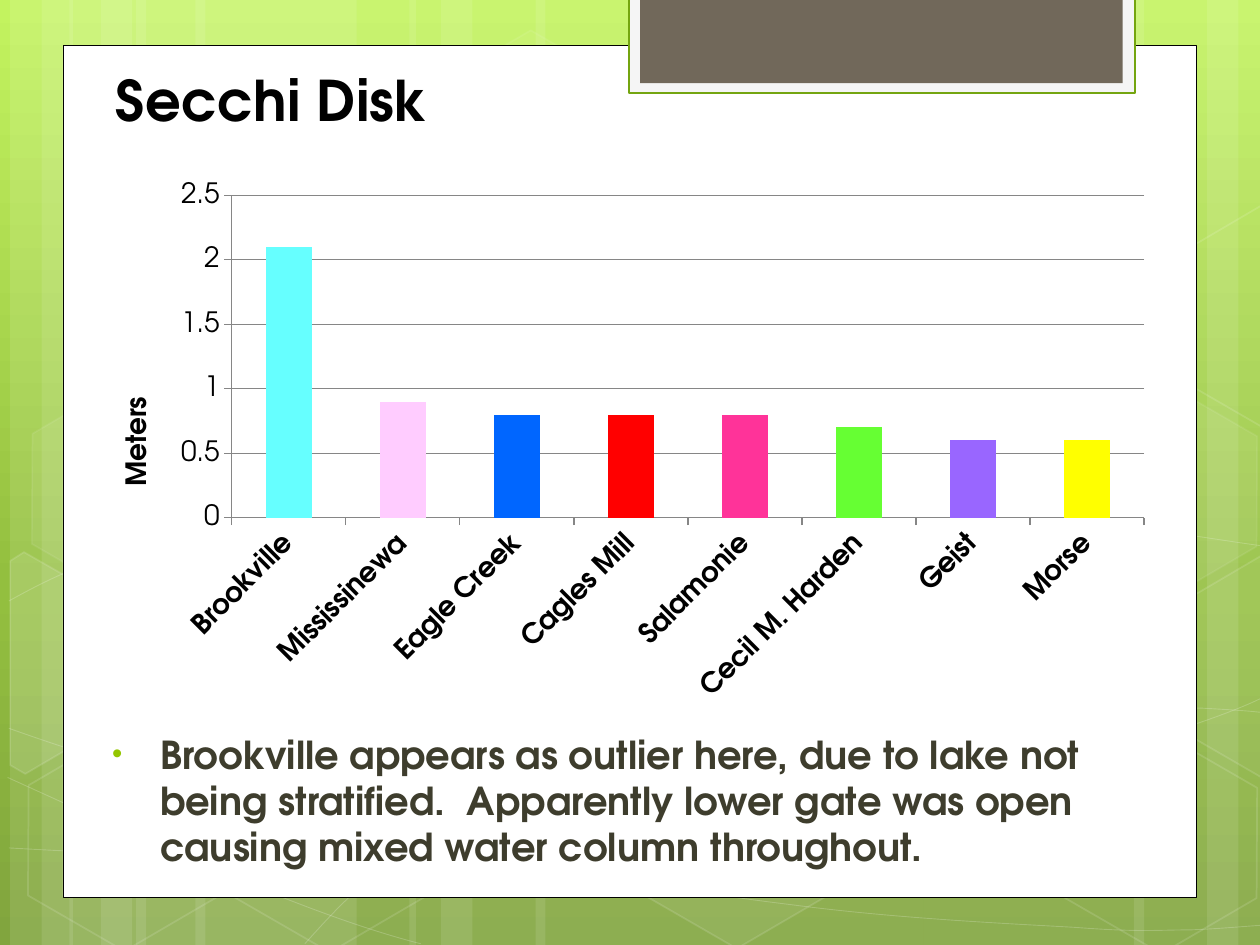
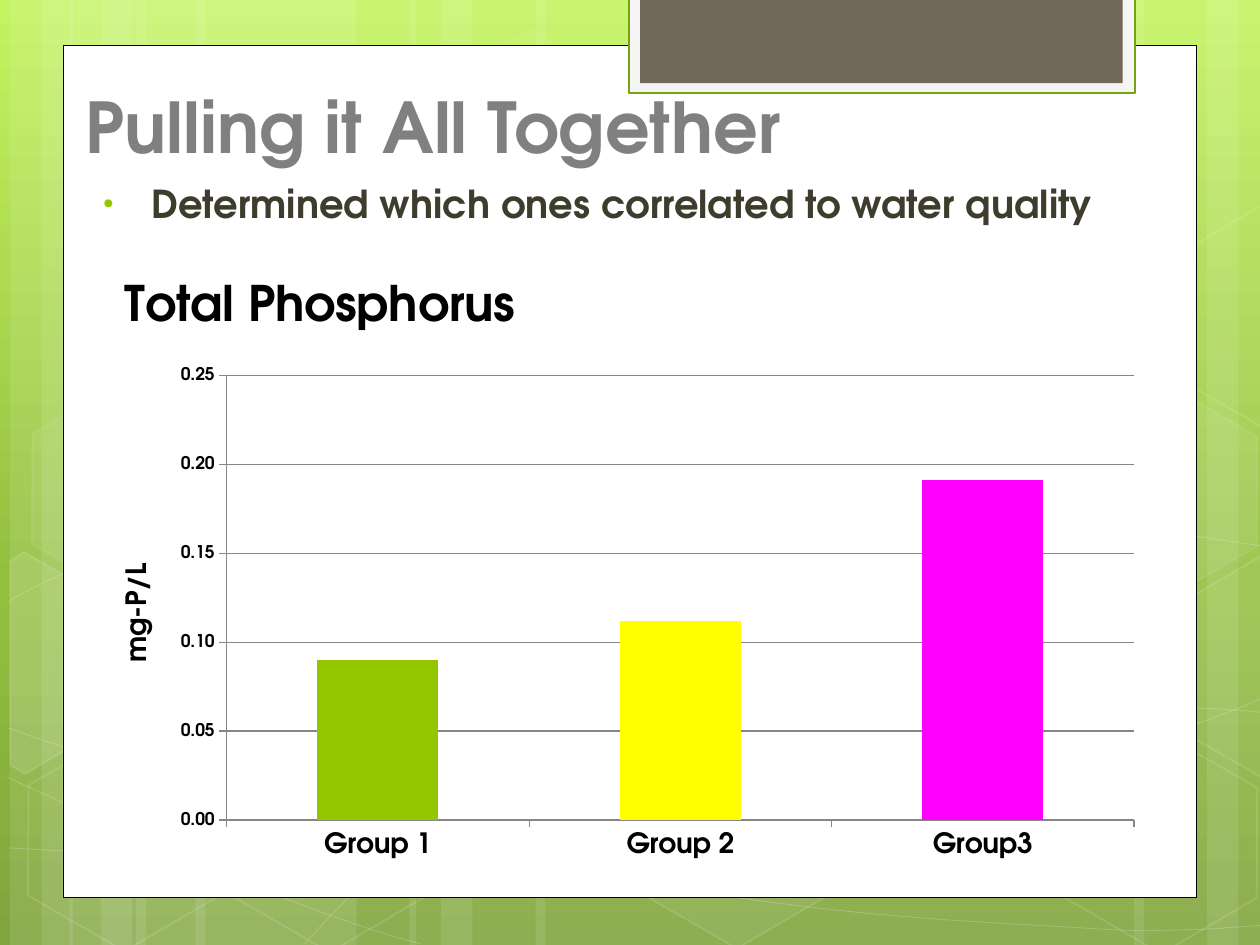
from copy import deepcopy
from math import cos, radians, sin

from lxml import etree
from pptx import Presentation
from pptx.chart.data import CategoryChartData
from pptx.dml.color import RGBColor
from pptx.enum.chart import XL_CHART_TYPE as CHART, XL_TICK_MARK as TICK
from pptx.enum.shapes import MSO_SHAPE as SHAPE
from pptx.enum.text import MSO_ANCHOR as ANCHOR, MSO_AUTO_SIZE as AUTO, PP_ALIGN as ALIGN
from pptx.oxml.ns import qn
from pptx.util import Inches, Pt

FACE = "TeX Gyre Adventor"
WHITE = RGBColor(0xFF, 0xFF, 0xFF)
BLACK = RGBColor(0, 0, 0)
GREY = RGBColor(0x80, 0x80, 0x80)
GRID = RGBColor(0x86, 0x86, 0x86)
INK = RGBColor(0x3E, 0x3D, 0x2D)
LIME = RGBColor(0x94, 0xC6, 0x00)
YELLOW = RGBColor(0xFF, 0xFF, 0x00)
MAGENTA = RGBColor(0xFF, 0x00, 0xFF)
TAB_PAPER = RGBColor(0xF5, 0xF5, 0xF5)
TAB_EDGE = RGBColor(0x74, 0xA5, 0x10)
TAB_FILL = RGBColor(0x71, 0x68, 0x5A)
SKY = [(0, RGBColor(0xC3, 0xF3, 0x5F)), (0.62, RGBColor(0x93, 0xBF, 0x3F)),
       (1, RGBColor(0x81, 0xA5, 0x3E))]
LAKE_COLORS = [RGBColor(0x66, 0xFF, 0xFF), RGBColor(0xFF, 0xCC, 0xFF),
               RGBColor(0x00, 0x66, 0xFF), RGBColor(0xFF, 0x00, 0x00),
               RGBColor(0xFF, 0x33, 0x99), RGBColor(0x66, 0xFF, 0x33),
               RGBColor(0x99, 0x66, 0xFF), YELLOW]

TILT = 30
# Stripe groups: a wide, a narrow and a medium band each (left, width)
STRIPES = [(1.08, 1.75), (0.08, 0.5), (0.33, 0.83),
           (1.55, 1.75), (0.55, 0.5), (0.8, 0.83),
           (7.33, 1.75), (9.58, 0.5), (9, 0.83),
           (4.25, 3.08), (3.25, 0.5), (3.5, 0.83)]
# Start point, then cubic segments (two controls and an end)
WAVES = [
    [(0.07, 6.73), (0.61, 6.76, 1.15, 6.79, 1.9, 6.78), (2.65, 6.77, 3.58, 6.75, 4.58, 6.65),
     (5.58, 6.55, 7, 6.36, 7.92, 6.17), (8.83, 5.98, 9.77, 5.68, 10.07, 5.51)],
    [(0.07, 4.77), (0.36, 4.61, 0.65, 4.46, 1.21, 4.31), (1.78, 4.16, 2.59, 3.94, 3.47, 3.87),
     (4.36, 3.8, 5.44, 3.79, 6.54, 3.87), (7.64, 3.95, 9.47, 4.26, 10.07, 4.34)],
    [(0.06, 6.17), (1.27, 6.72, 2.47, 7.27, 3.34, 7.49)],
    [(0.07, 5.78), (0.38, 5.89, 0.7, 6, 1.28, 6.16), (1.86, 6.31, 2.73, 6.56, 3.57, 6.73),
     (4.4, 6.9, 5.45, 7.08, 6.28, 7.18), (7.11, 7.29, 8, 7.33, 8.53, 7.36),
     (9.05, 7.4, 9.19, 7.38, 9.45, 7.38), (9.71, 7.37, 9.89, 7.35, 10.07, 7.34)],
    [(2.42, 7.49), (2.6, 7.29, 2.78, 7.09, 3.02, 6.91), (3.26, 6.73, 3.6, 6.53, 3.88, 6.39),
     (4.16, 6.25, 4.33, 6.19, 4.7, 6.09), (5.06, 5.99, 5.73, 5.85, 6.08, 5.78),
     (6.44, 5.71, 6.49, 5.71, 6.8, 5.69), (7.11, 5.66, 7.6, 5.63, 7.94, 5.62),
     (8.29, 5.61, 8.86, 5.62, 8.86, 5.62), (9.08, 5.62, 9.31, 5.62, 9.53, 5.62),
     (9.71, 5.63, 9.88, 5.64, 9.97, 5.65), (10.06, 5.66, 10.03, 5.65, 10.06, 5.66)],
]
# Left, top, fill opacity, line opacity (percent)
HEXAGONS = [(3.34, 0.36, 4, 8), (4.97, 5.89, 6, 12), (0.11, 5.91, 0, 12),
            (0.14, 3.12, 7, 8), (1.74, 5.92, 0, 12), (7.53, 4.53, 10, 12),
            (8.34, 5.93, 0, 12), (8.34, 3.14, 7, 8)]
# Hexagons cut off by the slide edge: centre of the tilted frame, outline, fill opacity
CUT_HEXAGONS = [
    ((0.36, 5.35), [(0.08, 4.45), (0.19, 4.38), (0.96, 4.82), (0.95, 5.7), (0.2, 6.14),
                    (0.08, 6.07)], 10),
    ((9.85, 5.2), [(9.26, 4.85), (10.01, 4.41), (10.09, 4.46), (10.09, 6.13), (10.02, 6.17),
                   (9.26, 5.73)], 4),
    ((9.85, 2.41), [(9.26, 2.07), (10.01, 1.63), (10.1, 1.68), (10.09, 3.35), (10.02, 3.39),
                    (9.26, 2.95)], 0),
]


def set_format(target, **values):
    for name, value in values.items():
        setattr(target, name, value)


def set_font(font, size, bold=True, color=BLACK):
    set_format(font, name=FACE, size=Pt(size), bold=bold)
    font.color.rgb = color


def box_inches(box):
    return [Inches(v) for v in box]


def paint(fill, color, opacity=100):
    """Fill with a solid colour, or with nothing when opacity is 0."""
    if not opacity:
        fill.background()
        return
    fill.solid()
    fill.fore_color.rgb = color


def set_opacity(parent, opacity):
    for clr in parent.findall(f"{qn('a:solidFill')}/{qn('a:srgbClr')}"):
        etree.SubElement(clr, qn("a:alpha"), val=str(opacity * 1000))


def style(shape, fill=WHITE, opacity=100, line=None, width=1, line_opacity=100):
    shape.shadow.inherit = False
    paint(shape.fill, fill, opacity)
    if opacity < 100:
        set_opacity(shape.element.spPr, opacity)
    if line is None:
        shape.line.fill.background()
        return
    paint(shape.line.fill, line)
    shape.line.width = Pt(width)
    if line_opacity < 100:
        set_opacity(shape.element.spPr.find(qn("a:ln")), line_opacity)


def add_box(s, box, kind=SHAPE.RECTANGLE, **look):
    sp = s.shapes.add_shape(kind, *box_inches(box))
    style(sp, **look)
    return sp


def add_outline(s, points, close, **look):
    (x, y), *rest = [box_inches(p) for p in points]
    builder = s.shapes.build_freeform(x, y)
    builder.add_line_segments(rest, close=close)
    sp = builder.convert_to_shape()
    style(sp, **look)
    return sp


def add_wave(s, start, segments):
    """Draw through all control points, then turn each three lines into one curve."""
    points = [start] + [seg[i:i + 2] for seg in segments for i in (0, 2, 4)]
    sp = add_outline(s, points, False, opacity=0, line=WHITE, width=0.5, line_opacity=20)
    lines = list(sp.element.iter(qn("a:lnTo")))
    for i in range(0, len(lines), 3):
        curve = etree.Element(qn("a:cubicBezTo"))
        lines[i].addprevious(curve)
        for line in lines[i:i + 3]:
            curve.append(line[0])
            line.getparent().remove(line)


def turn_back(point, centre):
    """Undo the tilt of a point around the centre of its frame."""
    dx, dy = point[0] - centre[0], point[1] - centre[1]
    c, k = cos(radians(TILT)), sin(radians(TILT))
    return centre[0] + dx * c + dy * k, centre[1] - dx * k + dy * c


def set_background(layout):
    fill = layout.background.fill
    fill.gradient()
    fill.gradient_angle = 270
    stops = next(layout.element.iter(qn("a:gsLst")))
    stops.append(deepcopy(stops[-1]))
    for stop, (position, color) in zip(fill.gradient_stops, SKY):
        stop.position = position
        stop.color.rgb = color


def draw_backdrop(s):
    for left, width in STRIPES:
        add_box(s, (left, 0, width, 7.5), opacity=10)
    for start, *segments in WAVES:
        add_wave(s, start, segments)
    for left, top, opacity, line_opacity in HEXAGONS:
        sp = add_box(s, (left, top, 1.75, 1.52), SHAPE.HEXAGON, opacity=opacity,
                     line=WHITE, line_opacity=line_opacity)
        sp.adjustments[0] = 0.285
        sp.rotation = TILT
    for centre, points, opacity in CUT_HEXAGONS:
        sp = add_outline(s, [turn_back(p, centre) for p in points], True,
                         opacity=opacity, line=WHITE, line_opacity=12)
        sp.rotation = TILT
    add_box(s, (0.5, 0.36, 9, 6.76), line=BLACK, width=0.5)
    add_box(s, (4.99, -0.02, 4.02, 0.76), fill=TAB_PAPER, line=TAB_EDGE, width=1.25)
    add_box(s, (5.08, -0.02, 3.83, 0.68), fill=TAB_FILL)


def share_backdrop(s):
    """Draw the backdrop and move it to the layout, so every slide shows it."""
    own = {sp.shape_id for sp in s.shapes}
    draw_backdrop(s)
    tree = s.slide_layout.element.cSld.spTree
    for sp in list(s.shapes):
        if sp.shape_id not in own:
            tree.append(sp.element)
    set_background(s.slide_layout)


def place(sp, box):
    set_format(sp, **dict(zip(("left", "top", "width", "height"), box_inches(box))))


def fill_title(s, box, text):
    sp = s.shapes.title
    place(sp, box)
    tf = sp.text_frame
    set_format(tf, text=text, word_wrap=True, auto_size=AUTO.NONE,
               vertical_anchor=ANCHOR.BOTTOM)
    p = tf.paragraphs[0]
    p.alignment = ALIGN.LEFT
    set_font(p.runs[0].font, 40, color=GREY)


def fill_body(s, box, text):
    sp = s.placeholders[1]
    place(sp, box)
    tf = sp.text_frame
    set_format(tf, text=text, word_wrap=True, auto_size=AUTO.NONE,
               vertical_anchor=ANCHOR.TOP)
    p = tf.paragraphs[0]
    set_font(p.runs[0].font, 22, color=INK)
    pPr = p._p.get_or_add_pPr()
    pPr.set("marL", str(Inches(0.5)))
    pPr.set("indent", str(Inches(-0.38)))
    clr = etree.SubElement(pPr, qn("a:buClr"))
    etree.SubElement(clr, qn("a:srgbClr"), val=str(LIME))
    etree.SubElement(pPr, qn("a:buSzPct"), val="76000")
    etree.SubElement(pPr, qn("a:buChar"), char="•")


def set_layout(element, chart_box, box, inner=False):
    """Pin a chart part to a slide position; box is left, top and maybe width, height."""
    layout = element.find(qn("c:layout"))
    if layout is None:
        layout = etree.Element(qn("c:layout"))
        element.insert(0, layout)
    manual = etree.SubElement(layout, qn("c:manualLayout"))
    if inner:
        etree.SubElement(manual, qn("c:layoutTarget"), val="inner")
    for side in ("x", "y"):
        etree.SubElement(manual, qn(f"c:{side}Mode"), val="edge")
    left, top, width, height = chart_box
    offsets = (left, top, 0, 0)
    for side, value, offset, size in zip("xywh", box, offsets, (width, height) * 2):
        etree.SubElement(manual, qn(f"c:{side}"), val=f"{(value - offset) / size:.4f}")


def set_title(title, text, size, chart_box, at):
    title.text_frame.text = text
    set_font(title.text_frame.paragraphs[0].runs[0].font, size)
    set_layout(title.element, chart_box, at)


def add_bars(s, box, plot_box, values, colors, title, unit, top, step,
             number_format="General", value_font=(16, False), slant=0):
    """Column chart; title and unit are (text, size, position on the slide)."""
    data = CategoryChartData(number_format=number_format)
    data.categories = list(values)
    data.add_series("Series 1", list(values.values()))
    chart = s.shapes.add_chart(CHART.COLUMN_CLUSTERED, *box_inches(box), data).chart
    chart.has_legend = False
    set_font(chart.font, 10, False)
    chart.has_title = True
    set_title(chart.chart_title, title[0], title[1], box, title[2])
    set_layout(chart.element.xpath("c:chart/c:plotArea")[0], box, plot_box, inner=True)

    plot = chart.plots[0]
    set_format(plot, gap_width=150, vary_by_categories=False)
    series = plot.series[0]
    paint(series.format.fill, LIME)
    for i, color in enumerate(colors):
        paint(series.points[i].format.fill, color)

    cat, val = chart.category_axis, chart.value_axis
    for axis, font in ((cat, (16, True)), (val, value_font)):
        set_format(axis, major_tick_mark=TICK.OUTSIDE, minor_tick_mark=TICK.NONE)
        axis.format.line.color.rgb = GRID
        set_font(axis.tick_labels.font, *font)
    cat.has_major_gridlines = False
    set_format(val, minimum_scale=0, maximum_scale=top, major_unit=step,
               has_major_gridlines=True, has_title=True)
    val.major_gridlines.format.line.color.rgb = GRID
    set_format(val.tick_labels, number_format=number_format, number_format_is_linked=False)
    set_title(val.axis_title, unit[0], unit[1], box, unit[2])
    turned = [(val.axis_title.element.xpath("c:tx/c:rich/a:bodyPr")[0], -90)]
    if slant:
        turned.append((chart.element.xpath(".//c:catAx/c:txPr/a:bodyPr")[0], slant))
    for body, angle in turned:
        body.set("rot", str(angle * 60000))
        body.set("vert", "horz")


def secchi_slide(s):
    title = s.shapes.title.element
    title.getparent().remove(title)
    fill_body(s, (0.67, 5.75, 8.36, 1.25),
              "Brookville appears as outlier here, due to lake not being stratified.  "
              "Apparently lower gate was open causing mixed water column throughout.")
    depths = {"Brookville": 2.1, "Mississinewa": 0.9, "Eagle Creek": 0.8, "Cagles Mill": 0.8,
              "Salamonie": 0.8, "Cecil M. Harden": 0.7, "Geist": 0.6, "Morse": 0.6}
    add_bars(s, (0.75, 0.5, 8.5, 5.17), (1.84, 1.55, 7.24, 2.56), depths, LAKE_COLORS,
             ("Secchi Disk", 32, (0.84, 0.5)), ("Meters", 16, (0.93, 3.11)),
             top=2.5, step=0.5, slant=-45)


def phosphorus_slide(s):
    fill_body(s, (0.6, 1.38, 8.36, 0.67), "Determined which ones correlated to water quality")
    fill_title(s, (0.58, 0.55, 7.68, 0.83), "Pulling it All Together")
    add_bars(s, (0.75, 2.08, 8.42, 4.83), (1.8, 2.98, 7.2, 3.53),
             {"Group 1": 0.09, "Group 2": 0.112, "Group3": 0.191}, [LIME, YELLOW, MAGENTA],
             ("Total Phosphorus", 28, (0.92, 2.15)), ("mg-P/L", 16, (0.93, 4.43)),
             top=0.25, step=0.05, number_format="0.00", value_font=(10, True))


def main():
    prs = Presentation()
    set_format(prs, slide_width=Inches(10), slide_height=Inches(7.5))
    layout = prs.slide_layouts[1]
    first, second = (prs.slides.add_slide(layout) for _ in range(2))
    share_backdrop(first)
    secchi_slide(first)
    phosphorus_slide(second)
    prs.save("out.pptx")


if __name__ == "__main__":
    main()
